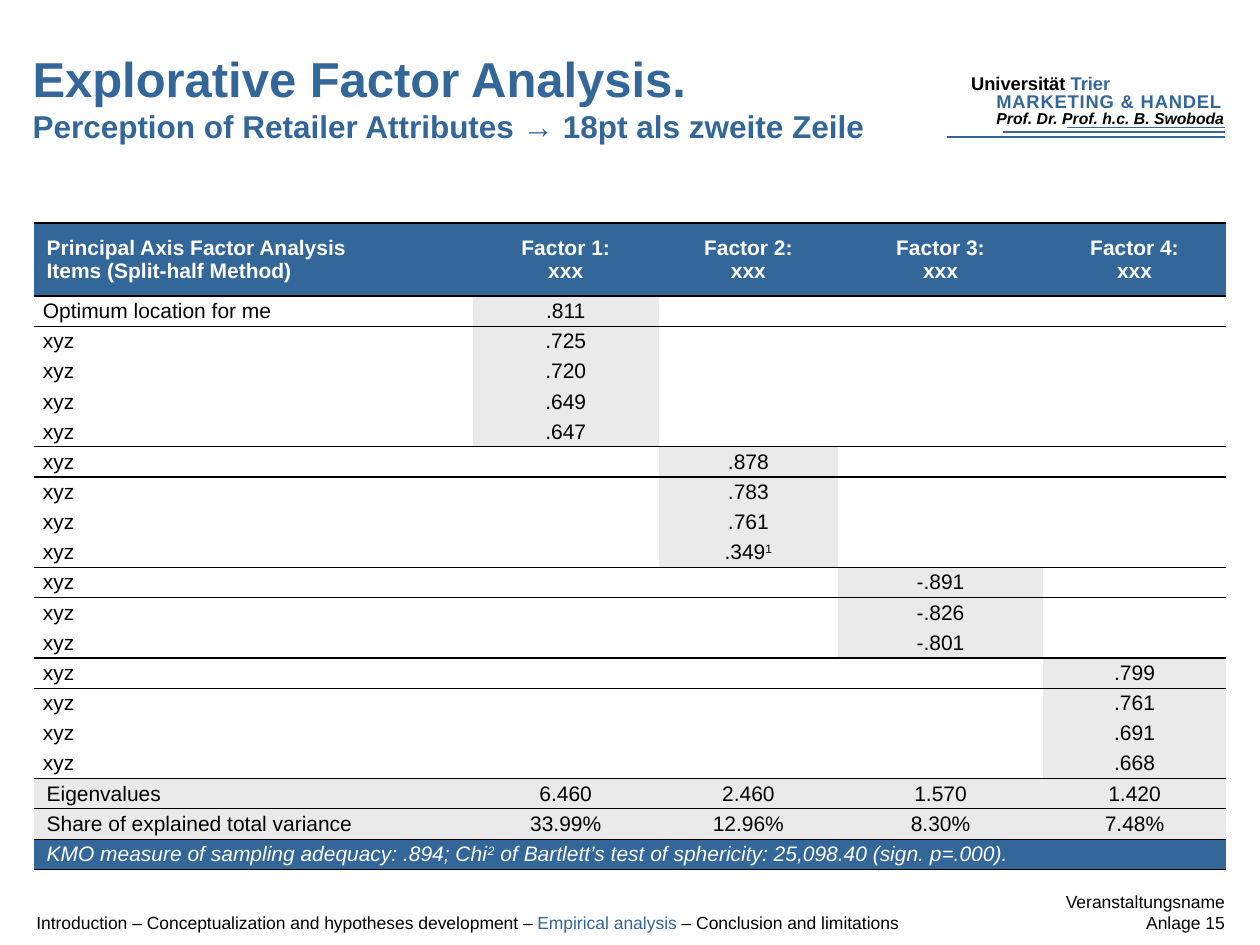
from pptx import Presentation
from pptx.dml.color import RGBColor
from pptx.enum.shapes import MSO_CONNECTOR
from pptx.enum.text import MSO_ANCHOR, PP_ALIGN
from pptx.oxml.ns import qn
from pptx.util import Inches, Pt
from lxml import etree

LEFT, MID, RIGHT = PP_ALIGN.LEFT, PP_ALIGN.CENTER, PP_ALIGN.RIGHT
TOP, CORE, BASE = MSO_ANCHOR.TOP, MSO_ANCHOR.MIDDLE, MSO_ANCHOR.BOTTOM
LINE = MSO_CONNECTOR.STRAIGHT
FONT = "Arial"
PLAIN = "{2D5ABB26-0587-4C30-8999-92F81FD0307C}"
HUE = {"blue": "336699", "black": "000000", "white": "FFFFFF", "grey": "EAEAEA"}

BOLD = {"bold": True}
SLANT = {"italic": True}
SUPER = {"attr": ("baseline", "30000")}

TEXTS = [
    ((7.61, 0.52, 2.27, 0.29), TOP, LEFT, 0.1,
     [[("Universität ", 10.5, "black", BOLD), ("Trier", 10.5, "blue", BOLD)]]),
    ((7.81, 0.67, 2.46, 0.29), TOP, LEFT, 0.1,
     [[("MARKETING & HANDEL", 10.5, "blue", {**BOLD, "attr": ("spc", "50")})]]),
    ((7.81, 0.81, 2.85, 0.25), TOP, LEFT, 0.1,
     [[("Prof. Dr. Prof. h.c. B. Swoboda", 9, "black", {**BOLD, **SLANT})]]),
    ((7.52, 7.07, 2.2, 0.34), TOP, RIGHT, 0,
     [[("Veranstaltungsname", 10, "black", {})], [("Anlage 15", 10, "black", {})]]),
    ((0.16, 0.17, 7.21, 1.03), BASE, LEFT, 0.1,
     [[("Explorative Factor Analysis.\n", 28, "blue", BOLD),
       ("Perception of Retailer Attributes → 18pt als zweite Zeile", 18, "blue", BOLD)]]),
    ((0.19, 7.12, 8.24, 0.4), CORE, LEFT, 0.1,
     [[("Introduction – Conceptualization and hypotheses development – ", 10, "black", {}),
       ("Empirical analysis", 10, "blue", {}),
       (" – Conclusion and limitations", 10, "black", {})]]),
]
RULES = [(7.52, 1.09, 1), (7.96, 1.05, 1), (8.47, 1.01, 0.5)]
EDGE = 9.72

HEAD = ["Principal Axis Factor Analysis", "Items (Split-half Method)"]
LOADS = [
    [".811", ".725", ".720", ".649", ".647"],
    [".878", ".783", ".761", ".349"],
    ["-.891", "-.826", "-.801"],
    [".799", ".761", ".691", ".668"],
]
NOTED = ".349"
FIRST, OTHER = "Optimum location for me", "xyz"
SUMS = [
    ("Eigenvalues", "6.460", "2.460", "1.570", "1.420"),
    ("Share of explained total variance", "33.99%", "12.96%", "8.30%", "7.48%"),
]
TEST = [("KMO measure of sampling adequacy: .894; Chi", SLANT), ("2", {**SLANT, **SUPER}),
        (" of Bartlett’s test of sphericity: 25,098.40 (sign. p=.000).", SLANT)]
COLS = [3.48, 1.48, 1.42, 1.63, 1.45]
TALL, FULL = 0.58, 5.13


def tint(name):
    return RGBColor.from_string(HUE[name])


def write(frame, paras, align):
    for i, runs in enumerate(paras):
        para = frame.paragraphs[0] if i == 0 else frame.add_paragraph()
        para.alignment = align
        for text, size, hue, look in runs:
            for j, part in enumerate(text.split("\n")):
                if j:
                    para.add_line_break()
                if not part:
                    continue
                run = para.add_run()
                run.text = part
                font = run.font
                font.name, font.size = FONT, Pt(size)
                font.color.rgb = tint(hue)
                font.bold = look.get("bold", False)
                font.italic = look.get("italic", False)
                if "attr" in look:
                    run._r.get_or_add_rPr().set(*look["attr"])


def border(cell, side, width):
    line = etree.SubElement(cell._tc.get_or_add_tcPr(), qn("a:" + side), w=str(Pt(width)))
    fill = etree.SubElement(line, qn("a:solidFill"))
    etree.SubElement(fill, qn("a:srgbClr"), val=HUE["black"])


def style(cell, paras, align, fill, pad, top, low):
    cell.vertical_anchor = CORE
    cell.margin_left = cell.margin_right = Inches(pad)
    cell.margin_top = cell.margin_bottom = Inches(0.02 if pad == 0.1 else 0)
    for side, width in (("lnT", top), ("lnB", low)):
        if width:
            border(cell, side, width)
    if fill:
        cell.fill.solid()
        cell.fill.fore_color.rgb = tint(fill)
    else:
        cell.fill.background()
    if paras:
        write(cell.text_frame, paras, align)
    else:
        end = etree.SubElement(cell.text_frame.paragraphs[0]._p, qn("a:endParaRPr"))
        end.set("sz", "1200")


def layout():
    def item(text, hue="black", look={}):
        return [(text, 12, hue, look)]

    heads = [[item(t, "white", BOLD) for t in HEAD]]
    heads += [[item(f"Factor {n}:\nxxx", "white", BOLD)] for n in range(1, len(COLS))]
    rows, rules = [(heads, ["blue"] * len(COLS), 0.1)], {0: 0.75, 1: 1}
    for g, loads in enumerate(LOADS, 1):
        for load in loads:
            cells, fills = [None] * len(COLS), [None] * len(COLS)
            cells[0] = [item(FIRST if len(rows) == 1 else OTHER)]
            cells[g] = [item(load) + (item("1", "black", SUPER) if load == NOTED else [])]
            fills[g] = "grey"
            rows.append((cells, fills, 0.07))
        rules[len(rows)] = 0.75
    for sums in SUMS:
        rows.append(([[item(s)] for s in sums], ["grey"] * len(COLS), 0.1))
    rules[len(rows)] = 0.75
    test = [[(text, 12, "white", look) for text, look in TEST]]
    rows.append(([test] + [None] * (len(COLS) - 1), ["blue"] * len(COLS), 0.1))
    rules[len(rows)] = 0.75
    return rows, rules


def grid(slide):
    rows, rules = layout()
    frame = slide.shapes.add_table(len(rows), len(COLS), Inches(0.27), Inches(1.77),
                                   Inches(sum(COLS)), Inches(FULL))
    table = frame.table
    table.first_row = table.horz_banding = False
    table._tbl.tblPr.find(qn("a:tableStyleId")).text = PLAIN
    for col, width in zip(table.columns, COLS):
        col.width = Inches(width)
    step = (FULL - TALL) / (len(rows) - 1)
    for r, (cells, fills, pad) in enumerate(rows):
        table.rows[r].height = Inches(step if r else TALL)
        for c, (paras, fill) in enumerate(zip(cells, fills)):
            style(table.cell(r, c), paras, MID if c else LEFT, fill, pad,
                  rules.get(r), rules.get(r + 1))
    last = len(rows) - 1
    table.cell(last, 0).merge(table.cell(last, len(COLS) - 1))


def main():
    deck = Presentation()
    deck.slide_width, deck.slide_height = Inches(10), Inches(7.5)
    slide = deck.slides.add_slide(deck.slide_layouts[6])
    for x, y, width in RULES:
        rule = slide.shapes.add_connector(LINE, Inches(x), Inches(y), Inches(EDGE), Inches(y))
        rule.line.color.rgb = tint("blue")
        rule.line.width = Pt(width)
        etree.SubElement(rule._element.spPr, qn("a:effectLst"))
    for place, anchor, align, pad, paras in TEXTS:
        frame = slide.shapes.add_textbox(*map(Inches, place)).text_frame
        frame.word_wrap = True
        frame.vertical_anchor = anchor
        frame.margin_left = frame.margin_right = Inches(pad)
        frame.margin_top = frame.margin_bottom = Inches(pad / 2)
        write(frame, paras, align)
    grid(slide)
    deck.save("out.pptx")


if __name__ == "__main__":
    main()
